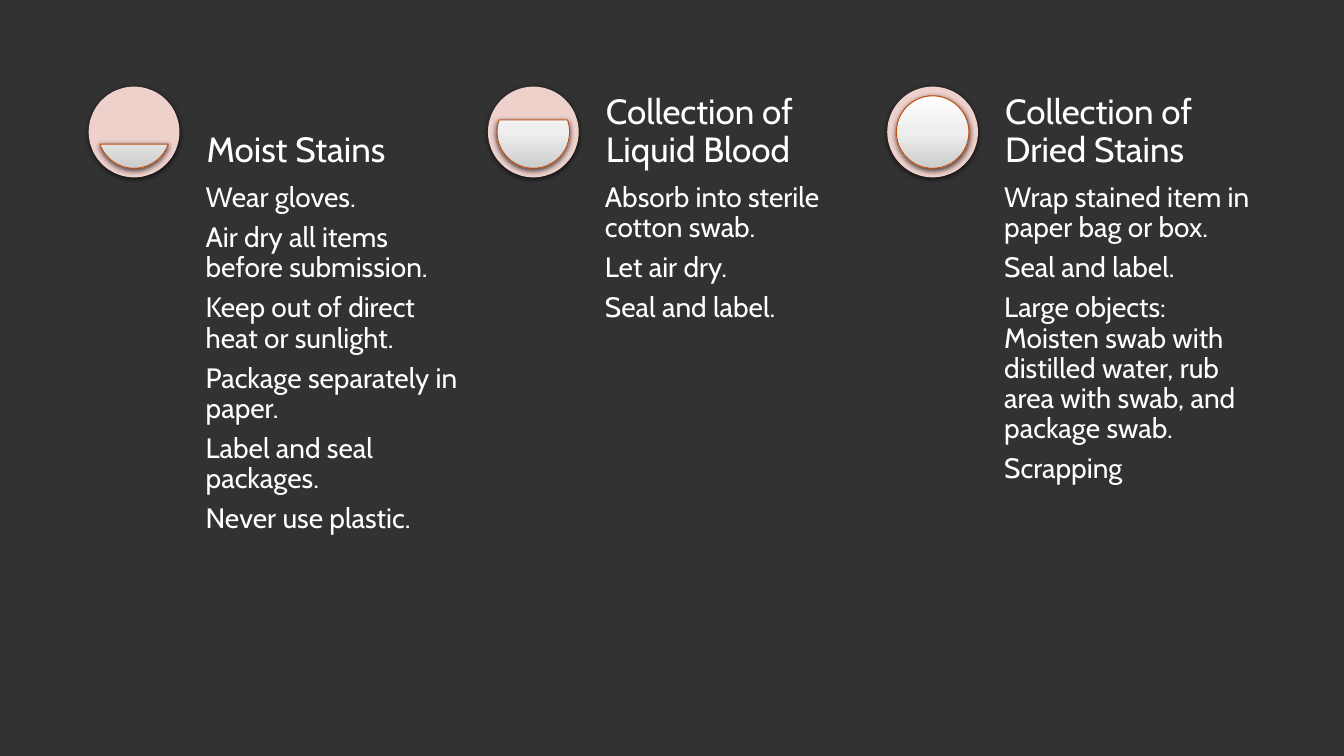
from lxml import etree
from pptx import Presentation
from pptx import util as u
from pptx.dml.color import RGBColor
from pptx.enum import shapes, text
from pptx.oxml import ns

# Content: heading, chord angles of the dial, advice
TOPICS = [
    ("Moist Stains", (11.683, 96.317), [
        "Wear gloves.",
        "Air dry all items before submission.",
        "Keep out of direct heat or sunlight.",
        "Package separately in paper.",
        "Label and seal packages.",
        "Never use plastic.",
    ]),
    ("Collection of Liquid Blood", (204.317, 119.683), [
        "Absorb into sterile cotton swab.",
        "Let air dry.",
        "Seal and label.",
    ]),
    ("Collection of Dried Stains", (162, 162), [
        "Wrap stained item in paper bag or box.",
        "Seal and label.",
        "Large objects: Moisten swab with distilled water, rub area with swab, "
        "and package swab.",
        "Scrapping",
    ]),
]

# Look
FONT = "Cabin"
DARK = RGBColor(0x32, 0x32, 0x32)
PINK = RGBColor(0xEF, 0xD1, 0xCC)
RUST = RGBColor(0xC1, 0x50, 0x14)
WHITE = RGBColor(0xFF, 0xFF, 0xFF)
SHEEN = [(0, WHITE), (50, RGBColor(0xEE, 0xEE, 0xEE)),
         (100, RGBColor(0xCC, 0xCC, 0xCC))]

# Grid, in inches
LEFT, TOP, STEP = 0.88, 0.86, 3.96
DIAL = 0.9
RIM = DIAL / 10
INDENT, WIDTH, DEPTH = 1.1, 2.68, 3.81

deck = Presentation()
deck.slide_width, deck.slide_height = u.Inches(13.33), u.Inches(7.5)
slide = deck.slides.add_slide(deck.slide_layouts[6])
slide.background.fill.solid()
slide.background.fill.fore_color.rgb = DARK


def add_tag(parent, tag, **attrs):
    return etree.SubElement(parent, ns.qn(tag), attrs)


def add_disc(kind, x, y, size):
    disc = slide.shapes.add_shape(kind, *map(u.Inches, (x, y, size, size)))
    disc.shadow.inherit = False
    glow = add_tag(disc._element.spPr.find(ns.qn("a:effectLst")), "a:outerShdw",
                   blurRad=str(u.Pt(4)), dist=str(u.Pt(1.2)),
                   dir="5400000", algn="ctr", rotWithShape="0")
    tint = add_tag(glow, "a:srgbClr", val="000000")
    add_tag(tint, "a:alpha", val="68000")
    return disc


def add_dial(x, angles):
    base = add_disc(shapes.MSO_SHAPE.OVAL, x, TOP, DIAL)
    base.fill.solid()
    base.fill.fore_color.rgb = PINK
    base.line.fill.background()
    level = add_disc(shapes.MSO_SHAPE.CHORD, x + RIM, TOP + RIM, DIAL - 2 * RIM)
    for i, angle in enumerate(angles):
        level.adjustments[i] = angle
    level.fill.gradient()
    level.fill.gradient_angle = 270
    stops = level._element.spPr.find(".//" + ns.qn("a:gsLst"))
    stops.clear()
    for spot, shade in SHEEN:
        stop = add_tag(stops, "a:gs", pos=str(spot * 1000))
        add_tag(stop, "a:srgbClr", val=str(shade))
    level.line.color.rgb = RUST
    level.line.width = u.Pt(0.75)


def add_text(x, y, high, lines, size, inset, anchor):
    box = slide.shapes.add_textbox(*map(u.Inches, (x, y, WIDTH, high)))
    frame = box.text_frame
    frame.word_wrap = True
    frame.vertical_anchor = anchor
    frame.margin_left = frame.margin_right = u.Inches(inset)
    frame.margin_top = frame.margin_bottom = u.Inches(inset)
    for i, line in enumerate(lines):
        para = frame.add_paragraph() if i else frame.paragraphs[0]
        para.line_spacing = 0.9
        para.space_after = u.Pt(0.35 * size)
        run = para.add_run()
        run.text = line
        run.font.name, run.font.size = FONT, u.Pt(size)
        run.font.color.rgb = WHITE


# One column per topic
for col, (head, angles, advice) in enumerate(TOPICS):
    x = LEFT + col * STEP
    add_dial(x, angles)
    add_text(x + INDENT, TOP + DIAL, DEPTH, advice, 20, 0.06,
             text.MSO_ANCHOR.TOP)
    add_text(x + INDENT, TOP, DIAL, [head], 25, 0.07, text.MSO_ANCHOR.BOTTOM)

deck.save("out.pptx")
